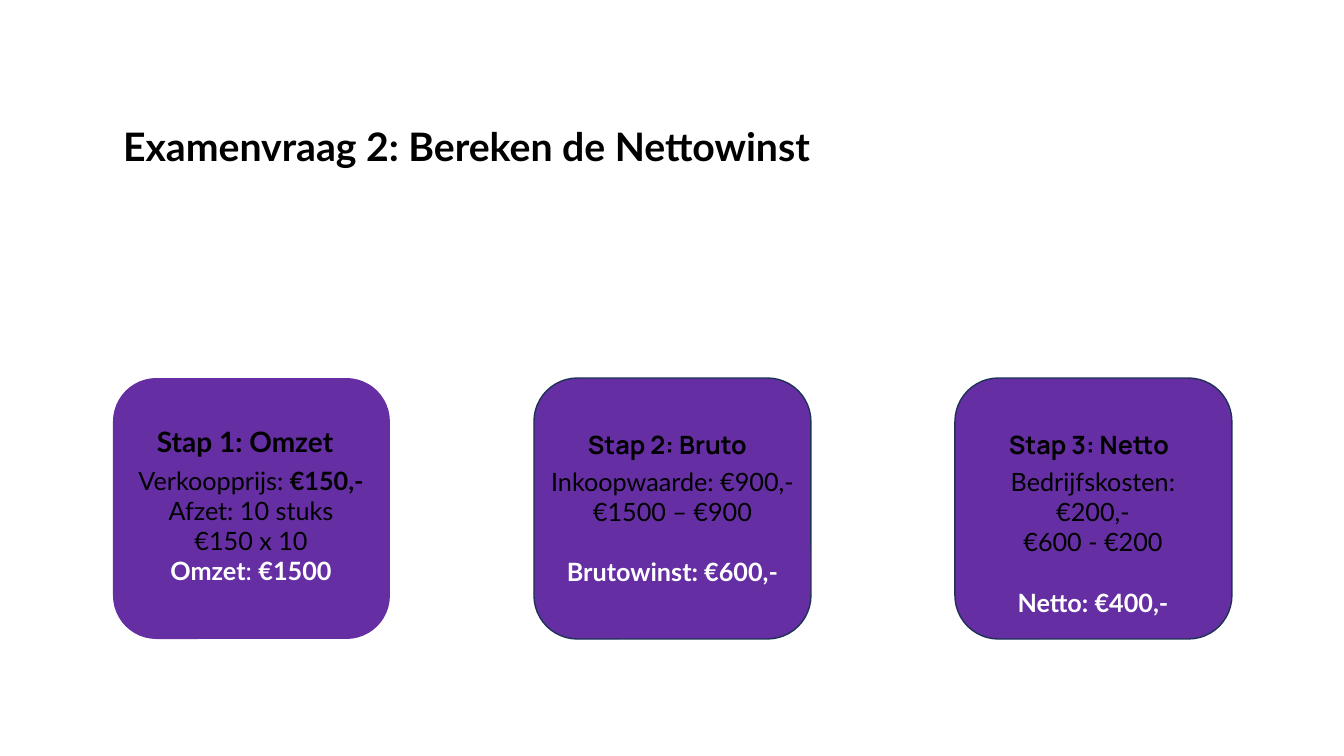
from pptx import Presentation
from pptx.dml.color import RGBColor
from pptx.enum.shapes import MSO_SHAPE
from pptx.enum.text import MSO_ANCHOR, PP_ALIGN
from pptx.util import Pt

EMU_PER_PX = 914400 / 100.8
ROUNDED = MSO_SHAPE.ROUNDED_RECTANGLE
LEFT, CENTER = PP_ALIGN.LEFT, PP_ALIGN.CENTER
TOP, MIDDLE = MSO_ANCHOR.TOP, MSO_ANCHOR.MIDDLE

COLORS = {"card": "652EA3", "border": "1E3256", "text": "000000", "result": "FFFFFF"}
CARD_LEFT, CARD_TOP, CARD_WIDTH, CARD_HEIGHT, CARD_PITCH = 113, 378, 277, 261, 421
BLANK_LINE = 21.6

STEPS = [
    {
        "border": False,
        "heading": ("Stap 1: Omzet", "Lato", 20, 420, 208),
        "body": (460, 248, 132),
        "lines": [
            [("Verkoopprijs: ", False), ("€150,-", True)],
            [("Afzet: 10 stuks", False)],
            [("€150 x 10", False)],
        ],
        "result": [("Omzet", True), (": ", False), ("€1500", True)],
        "gap": 0,
    },
    {
        "border": True,
        "heading": ("Stap 2: Bruto", "Manrope", 18, 424, 188),
        "body": (461, 277, 145),
        "lines": [[("Inkoopwaarde: €900,-", False)], [("€1500 – €900", False)]],
        "result": [("Brutowinst: €600,-", True)],
        "gap": BLANK_LINE,
    },
    {
        "border": True,
        "heading": ("Stap 3: Netto", "Manrope", 18, 424, 188),
        "body": (461, 262, 145),
        "lines": [[("Bedrijfskosten: €200,-", False)], [("€600 - €200", False)]],
        "result": [("Netto: €400,-", True)],
        "gap": BLANK_LINE,
    },
]


def px(length):
    """Turn pixels into EMU."""
    return round(length * EMU_PER_PX)


def color(key):
    """Look up a named colour."""
    return RGBColor.from_string(COLORS[key])


def write(paragraph, runs, font_name, size, color_key, align):
    """Fill a paragraph with (text, bold) runs in one font."""
    paragraph.alignment = align
    font = paragraph.font
    font.name, font.size = font_name, Pt(size)
    font.color.rgb = color(color_key)
    uniform = len({bold for _, bold in runs}) == 1
    if uniform:
        font.bold = runs[0][1]
    for text, bold in runs:
        run = paragraph.add_run()
        run.text = text
        if not uniform:
            run.font.bold = bold


def add_title(slide, text):
    """Place and format the slide title."""
    title = slide.shapes.title
    title.left, title.top, title.width, title.height = map(px, (113, 117, 894, 57))
    title.text_frame.vertical_anchor = MIDDLE
    write(title.text_frame.paragraphs[0], [(text, True)], "Lato", 28, "text", LEFT)


def add_card(slide, left, has_border):
    """Draw the rounded card behind a step."""
    card = slide.shapes.add_shape(
        ROUNDED, *map(px, (left, CARD_TOP, CARD_WIDTH, CARD_HEIGHT)))
    card.shadow.inherit = False
    card.fill.solid()
    card.fill.fore_color.rgb = color("card")
    if has_border:
        card.line.color.rgb = color("border")
        card.line.width = Pt(1)
    else:
        card.line.fill.background()


def add_card_text(slide, card_left, top, width, height):
    """Add a wrapping text frame centred across a card."""
    left = card_left + (CARD_WIDTH - width) // 2
    frame = slide.shapes.add_textbox(*map(px, (left, top, width, height))).text_frame
    frame.word_wrap = True
    frame.vertical_anchor = TOP
    return frame


def add_step(slide, left, step):
    """Build one calculation step: card, heading, sums and result."""
    add_card(slide, left, step["border"])
    text, font_name, size, top, width = step["heading"]
    heading = add_card_text(slide, left, top, width, 56)
    write(heading.paragraphs[0], [(text, True)], font_name, size, "text", LEFT)

    body = add_card_text(slide, left, *step["body"])
    for index, runs in enumerate(step["lines"]):
        paragraph = body.add_paragraph() if index else body.paragraphs[0]
        write(paragraph, runs, "Lato", 18, "text", CENTER)
    result = body.add_paragraph()
    if step["gap"]:
        result.space_before = Pt(step["gap"])
    write(result, step["result"], "Lato", 18, "result", CENTER)


def main():
    """Build and save the slide."""
    deck = Presentation()
    deck.slide_width, deck.slide_height = px(1344), px(756)
    slide = deck.slides.add_slide(deck.slide_layouts[5])
    add_title(slide, "Examenvraag 2: Bereken de Nettowinst")
    for index, step in enumerate(STEPS):
        add_step(slide, CARD_LEFT + index * CARD_PITCH, step)
    deck.save("out.pptx")


if __name__ == "__main__":
    main()
